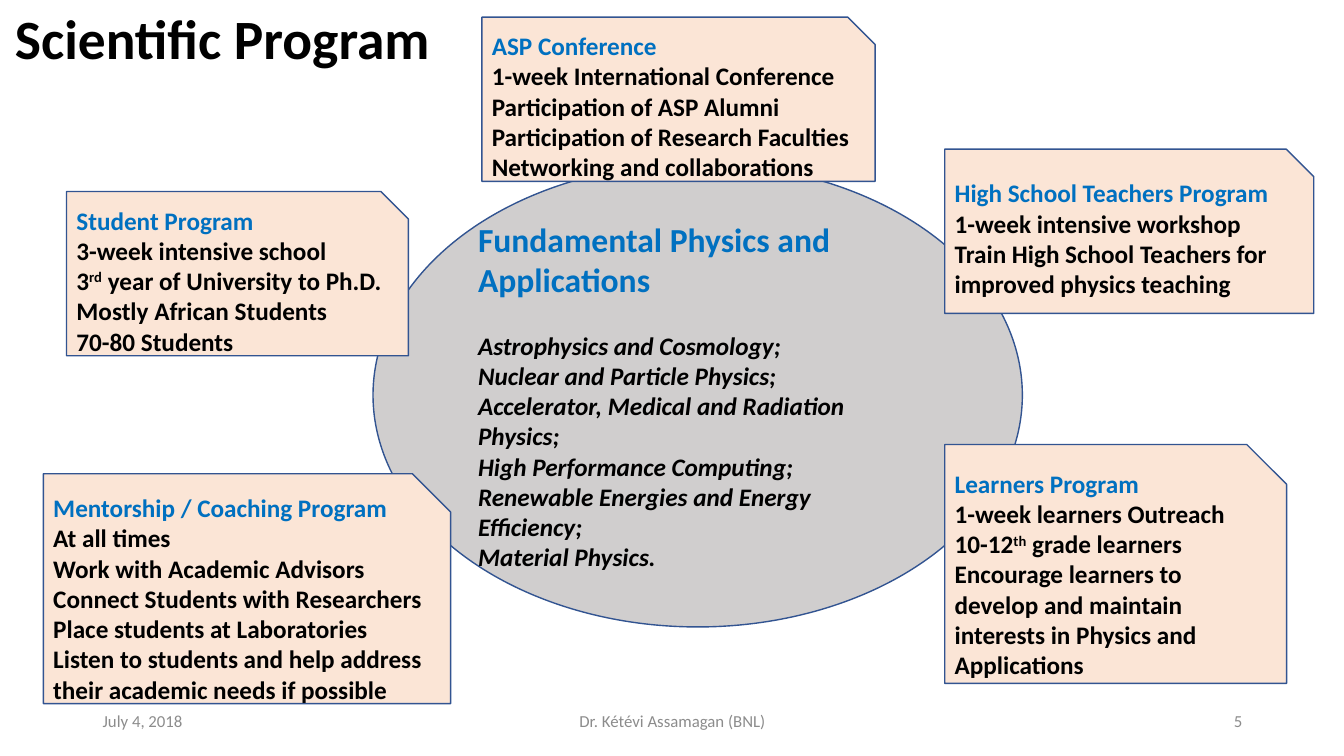
from pptx import Presentation
from pptx.dml.color import RGBColor
from pptx.enum.shapes import MSO_SHAPE
from pptx.enum.text import MSO_ANCHOR, PP_ALIGN
from pptx.util import Inches, Pt

ELLIPSE, SNIPPED = MSO_SHAPE.OVAL, MSO_SHAPE.SNIP_1_RECTANGLE
MIDDLE = MSO_ANCHOR.MIDDLE
LEFT, CENTER, RIGHT = PP_ALIGN.LEFT, PP_ALIGN.CENTER, PP_ALIGN.RIGHT
FONT = "Calibri"
BLACK, BLUE, GRAY = "000000", "0070C0", "8C8C8C"
PEACH, SILVER, OUTLINE = "FBE5D6", "D0CECE", "325491"

# Content: text between ^ marks is superscript; boxes are left, top, width, height
TITLE = "Scientific Program"
TITLE_BOX = (0.05, 0.11, 4.6, 0.61)

TOPICS_BOX = (3.7, 1.62, 6.44, 4.6)
TOPICS_HEADING = "Fundamental Physics and Applications"
TOPICS = [
    "Astrophysics and Cosmology;",
    "Nuclear and Particle Physics;",
    "Accelerator, Medical and Radiation Physics;",
    "High Performance Computing;",
    "Renewable Energies and Energy Efficiency;",
    "Material Physics.",
]

PROGRAMS = [
    ((0.66, 1.9, 3.39, 1.63), "Student Program", [
        "3-week intensive school",
        "3^rd^ year of University to Ph.D.",
        "Mostly African Students",
        "70-80 Students"]),
    ((4.78, 0.17, 3.9, 1.63), "ASP Conference", [
        "1-week International Conference",
        "Participation of ASP Alumni",
        "Participation of Research Faculties",
        "Networking and collaborations"]),
    ((9.37, 1.48, 3.66, 1.63), "High School Teachers Program", [
        "1-week intensive workshop",
        "Train High School Teachers for improved physics teaching"]),
    ((9.37, 4.41, 3.39, 2.37), "Learners Program", [
        "1-week learners Outreach",
        "10-12^th^ grade learners",
        "Encourage learners to develop and maintain interests in Physics and Applications"]),
    ((0.43, 4.7, 4.04, 2.28), "Mentorship / Coaching Program", [
        "At all times",
        "Work with Academic Advisors",
        "Connect Students with Researchers",
        "Place students at Laboratories",
        "Listen to students and help address their academic needs if possible"]),
]
CARD_RIGHT_MARGIN = 0.05

FOOTER_TOP, FOOTER_HEIGHT = 6.95, 0.4
FOOTERS = [
    (0.92, 3, "July 4, 2018", LEFT),
    (4.42, 4.5, "Dr. Kétévi Assamagan (BNL)", CENTER),
    (9.42, 3, "5", RIGHT),
]


def color(value):
    return RGBColor.from_string(value)


def write(frame, text, size=18, fill=BLACK, bold=True, italic=False,
          align=LEFT, before=0, spacing=1.0):
    """Add one paragraph, filling the empty first one if it is still free."""
    first = frame.paragraphs[0]
    paragraph = frame.add_paragraph() if first.runs else first
    paragraph.alignment = align
    paragraph.space_before = Pt(before)
    paragraph.line_spacing = spacing
    for index, part in enumerate(text.split("^")):
        run = paragraph.add_run()
        run.text = part
        font = run.font
        font.name, font.size, font.bold, font.italic = FONT, Pt(size), bold, italic
        font.color.rgb = color(fill)
        if index % 2:
            run._r.get_or_add_rPr().set("baseline", "30000")


def add_text_box(slide, box, text, **style):
    frame = slide.shapes.add_textbox(*map(Inches, box)).text_frame
    frame.word_wrap = True
    frame.vertical_anchor = MIDDLE
    write(frame, text, **style)


def add_panel(slide, kind, box, fill):
    shape = slide.shapes.add_shape(kind, *map(Inches, box))
    shape.shadow.inherit = False
    shape.fill.solid()
    shape.fill.fore_color.rgb = color(fill)
    shape.line.color.rgb = color(OUTLINE)
    shape.line.width = Pt(1)
    frame = shape.text_frame
    frame.word_wrap = True
    frame.vertical_anchor = MIDDLE
    return frame


def main():
    presentation = Presentation()
    presentation.slide_width = Inches(13.33)
    presentation.slide_height = Inches(7.5)
    slide = presentation.slides.add_slide(presentation.slide_layouts[6])

    # Title
    add_text_box(slide, TITLE_BOX, TITLE, size=39.6, spacing=0.9)

    # Central ellipse with the physics topics
    frame = add_panel(slide, ELLIPSE, TOPICS_BOX, SILVER)
    write(frame, TOPICS_HEADING, size=24, fill=BLUE)
    for index, topic in enumerate(TOPICS):
        write(frame, topic, italic=True, before=0 if index else 22)

    # Program cards around the ellipse
    for box, heading, lines in PROGRAMS:
        frame = add_panel(slide, SNIPPED, box, PEACH)
        frame.margin_right = Inches(CARD_RIGHT_MARGIN)
        write(frame, heading, fill=BLUE)
        for line in lines:
            write(frame, line)

    # Footer
    for left, width, text, align in FOOTERS:
        add_text_box(slide, (left, FOOTER_TOP, width, FOOTER_HEIGHT), text,
                     size=12, fill=GRAY, bold=False, align=align)

    presentation.save("out.pptx")


if __name__ == "__main__":
    main()
